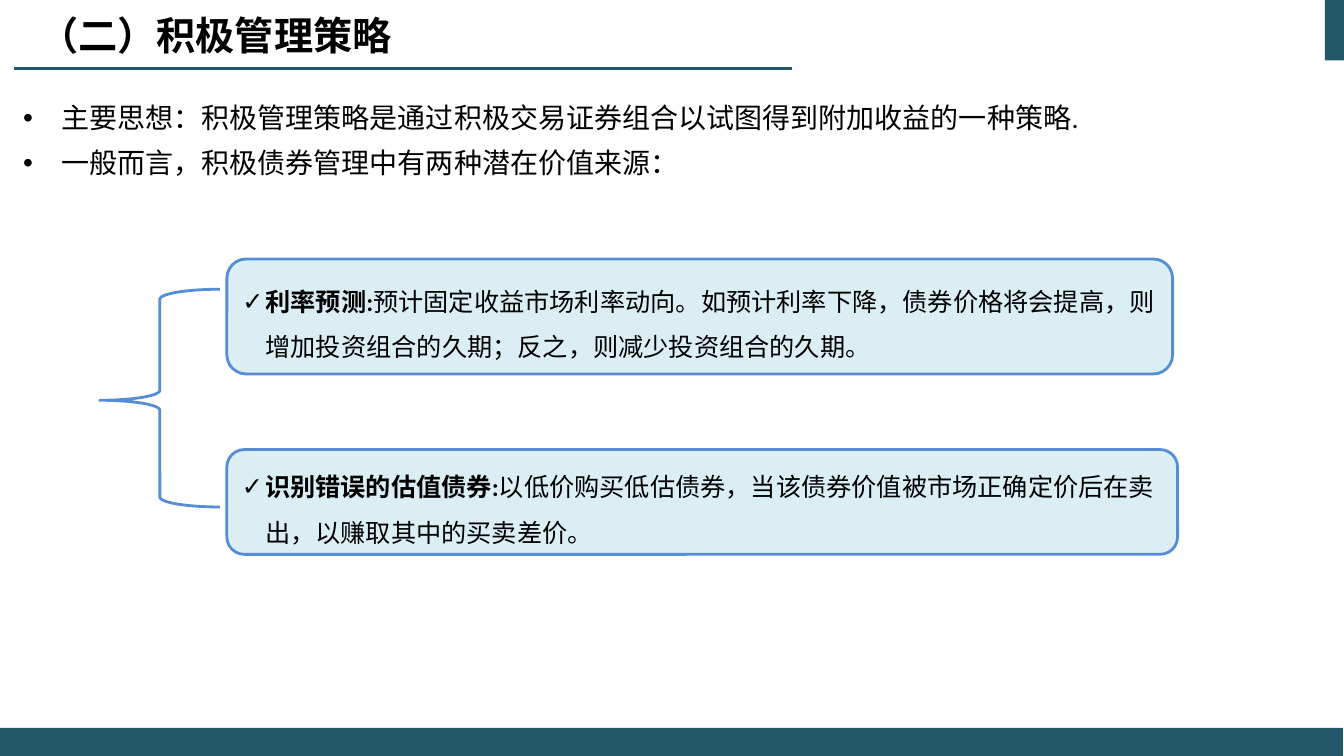
"""Builds a slide on active bond management strategy."""
from lxml import etree
from pptx import Presentation
from pptx.dml.color import RGBColor
from pptx.enum.shapes import MSO_CONNECTOR, MSO_SHAPE
from pptx.enum.text import MSO_ANCHOR, PP_ALIGN
from pptx.oxml.ns import qn
from pptx.util import Inches, Pt

TEAL = RGBColor(0x21, 0x59, 0x68)
BLUE = RGBColor(0x55, 0x8E, 0xD5)
PALE_BLUE = RGBColor(0xDB, 0xEE, 0xF4)
WHITE = RGBColor(0xFF, 0xFF, 0xFF)
BLACK = RGBColor(0, 0, 0)
CJK_FONT = "Noto Sans CJK SC"


def add_bullet(paragraph, mark, indent):
    properties = paragraph._p.get_or_add_pPr()
    properties.set("marL", str(Inches(indent)))
    properties.set("indent", str(-Inches(indent)))
    etree.SubElement(properties, qn("a:buFont")).set("typeface", "Arial")
    etree.SubElement(properties, qn("a:buChar")).set("char", mark)


def style_run(run, size, latin="Calibri", bold=False):
    run.font.size = Pt(size)
    run.font.name = latin
    run.font.bold = bold
    run.font.color.rgb = BLACK
    east_asian = etree.Element(qn("a:ea"), typeface=CJK_FONT)
    run.font._element.find(qn("a:latin")).addnext(east_asian)


deck = Presentation()
deck.slide_width, deck.slide_height = Inches(13.33), Inches(7.5)
slide = deck.slides.add_slide(deck.slide_layouts[6])
shapes = slide.shapes

for left, top, width, height in [(13.14, 0, 0.2, 0.6), (0, 7.22, 13.32, 0.28)]:
    band = shapes.add_shape(MSO_SHAPE.RECTANGLE, Inches(left), Inches(top), Inches(width), Inches(height))
    band.shadow.inherit = False
    band.fill.solid()
    band.fill.fore_color.rgb = TEAL
    band.line.fill.background()

title_rule = shapes.add_connector(MSO_CONNECTOR.STRAIGHT, Inches(7.86), Inches(0.68), Inches(0.14), Inches(0.68))
title_rule.line.color.rgb = TEAL
title_rule.line.width = Pt(1.5)
etree.SubElement(title_rule._element.spPr, qn("a:effectLst"))

title = shapes.add_textbox(Inches(0.29), Inches(0), Inches(10.88), Inches(0.69)).text_frame
title.word_wrap = True
title.vertical_anchor = MSO_ANCHOR.MIDDLE
title.text = "（二）积极管理策略"
style_run(title.paragraphs[0].runs[0], 28, CJK_FONT, True)

intro = shapes.add_textbox(Inches(0.13), Inches(0.84), Inches(12.89), Inches(5.58)).text_frame
intro.word_wrap = True
intro.text = (
    "主要思想：积极管理策略是通过积极交易证券组合以试图得到附加收益的一种策略.\n"
    "一般而言，积极债券管理中有两种潜在价值来源："
)
for point in intro.paragraphs:
    add_bullet(point, "•", 0.38)
    point.line_spacing = Pt(32)
    style_run(point.runs[0], 20)

brace = shapes.add_shape(MSO_SHAPE.LEFT_BRACE, Inches(0.99), Inches(2.87), Inches(1.19), Inches(2.16))
brace.adjustments[0] = 0.083
brace.adjustments[1] = 0.51
brace.shadow.inherit = False
brace.fill.solid()
brace.fill.fore_color.rgb = WHITE
brace.line.color.rgb = BLUE
brace.line.width = Pt(2)

value_sources = [
    (2.57, 9.38, 1.14, "利率预测:",
     "预计固定收益市场利率动向。如预计利率下降，债券价格将会提高，则增加投资组合的久期；反之，则减少投资组合的久期。"),
    (4.46, 9.43, 1.04, "识别错误的估值债券:",
     "以低价购买低估债券，当该债券价值被市场正确定价后在卖出，以赚取其中的买卖差价。"),
]
for top, width, height, heading, explanation in value_sources:
    card = shapes.add_shape(MSO_SHAPE.ROUNDED_RECTANGLE, Inches(2.25), Inches(top), Inches(width), Inches(height))
    card.shadow.inherit = False
    card.fill.solid()
    card.fill.fore_color.rgb = PALE_BLUE
    card.line.color.rgb = BLUE
    card.line.width = Pt(2)
    card.text_frame.word_wrap = True
    card.text_frame.vertical_anchor = MSO_ANCHOR.MIDDLE
    source = card.text_frame.paragraphs[0]
    add_bullet(source, "✓", 0.23)
    source.alignment = PP_ALIGN.LEFT
    source.line_spacing = 1.5
    for wording, bold in [(heading, True), (explanation, False)]:
        run = source.add_run()
        run.text = wording
        style_run(run, 18, bold=bold)

deck.save("out.pptx")
